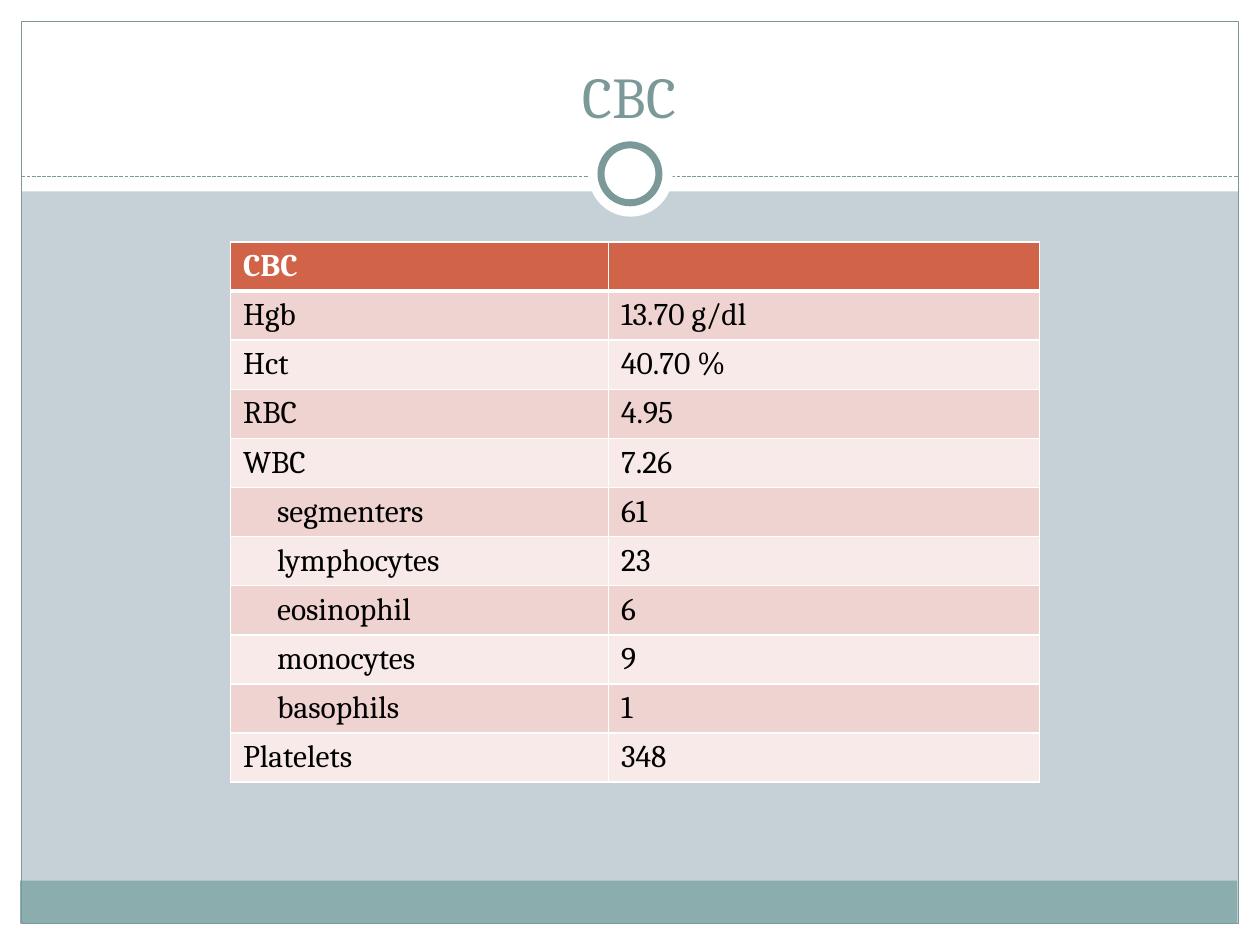
from dataclasses import dataclass

import pptx
import pptx.dml.color
import pptx.enum.dml
import pptx.enum.shapes
import pptx.enum.text
import pptx.oxml
import pptx.oxml.ns
import pptx.util
from pptx.util import Inches

SHAPE = pptx.enum.shapes.MSO_SHAPE
ALIGN = pptx.enum.text.PP_ALIGN
ANCHOR = pptx.enum.text.MSO_ANCHOR


@dataclass(frozen=True)
class Theme:
    font: str = "Cambria"
    title_size: float = 33
    table_size: float = 18
    background: str = "C5D1D7"
    white: str = "FFFFFF"
    black: str = "000000"
    accent: str = "7C999A"
    footer: str = "8CADAE"
    header: str = "D16349"
    bands: tuple = ("EED3D0", "F7EAE9")


THEME = Theme()

# Label, value, and whether the label is a part of the white cell count
RESULTS = [
    ("Hgb", "13.70 g/dl", False),
    ("Hct", "40.70 %", False),
    ("RBC", "4.95", False),
    ("WBC", "7.26", False),
    ("segmenters", "61", True),
    ("lymphocytes", "23", True),
    ("eosinophil", "6", True),
    ("monocytes", "9", True),
    ("basophils", "1", True),
    ("Platelets", "348", False),
]


def rgb(color):
    return pptx.dml.color.RGBColor.from_string(color)


def write(frame, text, size, color, bold=False, align=ALIGN.LEFT):
    paragraph = frame.paragraphs[0]
    paragraph.text = text
    paragraph.alignment = align
    font = paragraph.font
    font.name = THEME.font
    font.size = pptx.util.Pt(size)
    font.bold = bold
    font.color.rgb = rgb(color)


def add_panel(slide, box, fill=None, line=None, width=0.75, kind=SHAPE.RECTANGLE):
    panel = slide.shapes.add_shape(kind, *map(Inches, box))
    panel.shadow.inherit = False
    if fill:
        panel.fill.solid()
        panel.fill.fore_color.rgb = rgb(fill)
    else:
        panel.fill.background()
    if line:
        panel.line.color.rgb = rgb(line)
        panel.line.width = pptx.util.Pt(width)
    else:
        panel.line.fill.background()


def add_divider(slide, left, right, y):
    divider = slide.shapes.add_connector(
        pptx.enum.shapes.MSO_CONNECTOR.STRAIGHT,
        Inches(left), Inches(y), Inches(right), Inches(y))
    divider.line.color.rgb = rgb(THEME.accent)
    divider.line.width = pptx.util.Pt(0.75)
    divider.line.dash_style = pptx.enum.dml.MSO_LINE.SQUARE_DOT
    properties = divider._element.spPr
    properties.append(properties.makeelement(pptx.oxml.ns.qn("a:effectLst"), {}))


def add_frame(slide):
    # White margins and title band
    for box in ((0, 7.33, 10, 0.17), (0, 0, 10, 1.52),
                (0, 0, 0.17, 7.5), (9.83, 0, 0.17, 7.5)):
        add_panel(slide, box, THEME.white)
    # Footer band, border and divider
    add_panel(slide, (0.16, 6.99, 9.66, 0.34), THEME.footer)
    add_panel(slide, (0.17, 0.17, 9.66, 7.16), line=THEME.accent)
    add_divider(slide, 0.17, 9.83, 1.4)
    # Ring on the divider
    add_panel(slide, (4.67, 1.05, 0.67, 0.67), THEME.white, kind=SHAPE.OVAL)
    add_panel(slide, (4.77, 1.15, 0.46, 0.46), THEME.white, THEME.accent, 4,
              SHAPE.OVAL)


def add_title(slide, text):
    title = slide.shapes.title
    title.left, title.top = Inches(0.33), Inches(0.25)
    title.width, title.height = Inches(9.33), Inches(0.83)
    title.text_frame.vertical_anchor = ANCHOR.BOTTOM
    write(title.text_frame, text, THEME.title_size, THEME.accent,
          align=ALIGN.CENTER)
    # Bring the title in front of the white band
    slide.shapes._spTree.append(title._element)


def style_cell(cell, fill, top=1, bottom=1):
    properties = cell._tc.get_or_add_tcPr()
    for side, width in (("L", 1), ("R", 1), ("T", top), ("B", bottom)):
        properties.append(pptx.oxml.parse_xml(
            f'<a:ln{side} {pptx.oxml.ns.nsdecls("a")} w="{pptx.util.Pt(width)}">'
            f'<a:solidFill><a:srgbClr val="{THEME.white}"/></a:solidFill>'
            f'</a:ln{side}>'))
    cell.fill.solid()
    cell.fill.fore_color.rgb = rgb(fill)


def add_results_table(slide, heading, results):
    row_height = 0.39
    rows = len(results) + 1
    table = slide.shapes.add_table(
        rows, 2, Inches(1.83), Inches(1.92),
        Inches(6.42), Inches(row_height * rows)).table
    for column, width in zip(table.columns, (3, 3.42)):
        column.width = Inches(width)
    for row in table.rows:
        row.height = Inches(row_height)
    # Header row
    for column, text in enumerate((heading, "")):
        cell = table.cell(0, column)
        style_cell(cell, THEME.header, bottom=3)
        write(cell.text_frame, text, THEME.table_size, THEME.white, bold=True)
    # Banded result rows
    for index, (label, value, is_part) in enumerate(results):
        for column, text in enumerate((label, value)):
            cell = table.cell(index + 1, column)
            style_cell(cell, THEME.bands[index % 2], top=1 if index else 3)
            write(cell.text_frame, text, THEME.table_size, THEME.black)
        if is_part:
            table.cell(index + 1, 0).margin_left = Inches(0.37)


def main():
    deck = pptx.Presentation()
    deck.slide_width, deck.slide_height = Inches(10), Inches(7.5)
    slide = deck.slides.add_slide(deck.slide_layouts.get_by_name("Title Only"))
    slide.background.fill.solid()
    slide.background.fill.fore_color.rgb = rgb(THEME.background)
    add_frame(slide)
    add_title(slide, "CBC")
    add_results_table(slide, "CBC", RESULTS)
    deck.save("out.pptx")


if __name__ == "__main__":
    main()
